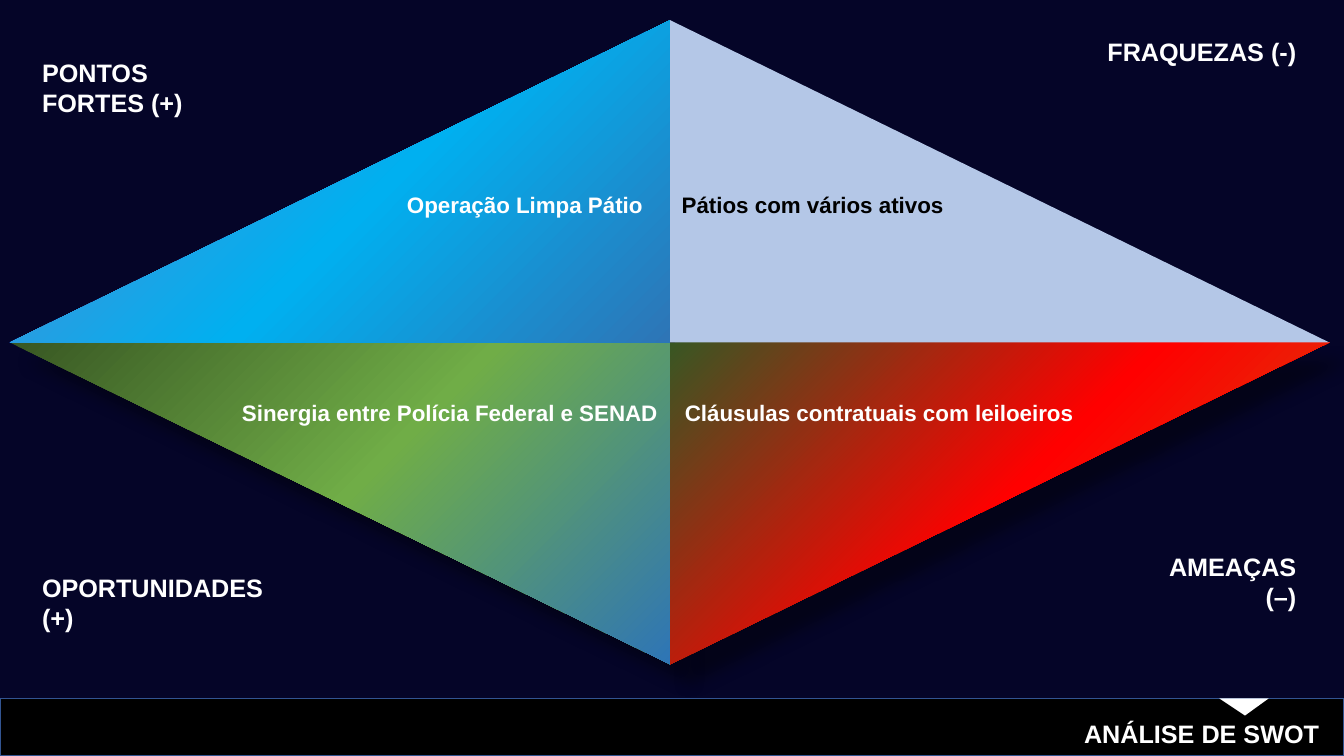
from copy import deepcopy

from pptx import Presentation
from pptx.dml.color import RGBColor
from pptx.enum.shapes import MSO_SHAPE
from pptx.enum.text import MSO_ANCHOR, PP_ALIGN
from pptx.oxml import parse_xml
from pptx.oxml.ns import nsdecls, qn
from pptx.util import Cm, Pt

RECT, WEDGE = MSO_SHAPE.RECTANGLE, MSO_SHAPE.ISOSCELES_TRIANGLE
LEFT, RIGHT = PP_ALIGN.LEFT, PP_ALIGN.RIGHT
MIDDLE = MSO_ANCHOR.MIDDLE

NAVY, BLACK, WHITE = "050528", "000000", "FFFFFF"
CENTER = (16.89, 8.63)
WEST, EAST, NORTH, SOUTH = 0.25, 33.5, 0.51, 16.74

# side x, tip y, (position, colour) stops, shadow
FACETS = [
    (WEST, SOUTH, [(0, "385723"), (0.5, "70AD47"), (1, "2E75B6")], True),
    (WEST, NORTH, [(0, "6183CB"), (0.55, "00B0F0"), (1, "2E75B6")], False),
    (EAST, SOUTH, [(0, "385723"), (0.5, "FF0000"), (1, "C55A11")], True),
    (EAST, NORTH, [(0, "B4C7E7")], False),
]
# box in cm, lines, alignment, size, colour
TEXTS = [
    ((0.81, 1.32, 4.98, 1.8), ["PONTOS FORTES (+)"], LEFT, 18, WHITE),
    ((0.81, 14.3, 6.35, 1.8), ["OPORTUNIDADES", "(+)"], LEFT, 18, WHITE),
    ((27.2, 0.79, 5.72, 1.02), ["FRAQUEZAS (-)"], RIGHT, 18, WHITE),
    ((26.57, 13.77, 6.35, 1.8), ["AMEAÇAS", "(–)"], RIGHT, 18, WHITE),
    ((3.98, 4.7, 12.47, 0.94), ["Operação Limpa Pátio"], RIGHT, 16, WHITE),
    ((5.28, 9.94, 11.55, 0.94), ["Sinergia entre Polícia Federal e SENAD"],
     RIGHT, 16, WHITE),
    ((17.01, 9.94, 11.55, 0.94), ["Cláusulas contratuais com leiloeiros"],
     LEFT, 16, WHITE),
    ((16.93, 4.7, 11.55, 0.94), ["Pátios com vários ativos"], LEFT, 16, BLACK),
]


def rgb(code):
    return RGBColor.from_string(code)


def place(box):
    return [Cm(n) for n in box]


def paint(shape, code):
    shape.fill.solid()
    shape.fill.fore_color.rgb = rgb(code)


def blend(shape, stops):
    """Fill with a diagonal gradient of three stops."""
    fill = shape.fill
    fill.gradient()
    fill.gradient_angle = 315
    first = shape.element.spPr.find(".//" + qn("a:gs"))
    first.addnext(deepcopy(first))
    for stop, (pos, code) in zip(fill.gradient_stops, stops):
        stop.position = pos
        stop.color.rgb = rgb(code)


def shade(shape):
    """Cast a soft shadow to the lower right."""
    shape.element.spPr.find(qn("a:effectLst")).append(parse_xml(
        f'<a:outerShdw {nsdecls("a")} blurRad="{Pt(12)}" dist="{Pt(19)}" '
        'dir="2700000" algn="tl" rotWithShape="0"><a:srgbClr val="000000">'
        '<a:alpha val="40000"/></a:srgbClr></a:outerShdw>'))


def add_facet(slide, side, tip, stops, shadow):
    x, y = CENTER
    pen = slide.shapes.build_freeform(Cm(x), Cm(tip))
    pen.add_line_segments([(Cm(side), Cm(y)), (Cm(x), Cm(y))], close=True)
    shape = pen.convert_to_shape()
    shape.shadow.inherit = False
    shape.line.fill.background()
    if len(stops) > 1:
        blend(shape, stops)
    else:
        paint(shape, stops[0][1])
    if shadow:
        shade(shape)


def add_block(slide, kind, box, code):
    shape = slide.shapes.add_shape(kind, *place(box))
    shape.shadow.inherit = False
    paint(shape, code)
    shape.line.fill.background()
    return shape


def write(frame, lines, align, size, code):
    frame.word_wrap = True
    frame.text = "\n".join(lines)
    look = {"name": "Arial", "size": Pt(size), "bold": True}
    for para in frame.paragraphs:
        para.alignment = align
        for key, value in look.items():
            setattr(para.font, key, value)
        para.font.color.rgb = rgb(code)


def add_text(slide, box, *style):
    write(slide.shapes.add_textbox(*place(box)).text_frame, *style)


def set_title(slide, box, text):
    title = slide.shapes.title
    for key, value in zip(("left", "top", "width", "height"), place(box)):
        setattr(title, key, value)
    write(title.text_frame, [text], RIGHT, 18, WHITE)
    title.text_frame.vertical_anchor = MIDDLE
    tree = slide.shapes.element
    tree.remove(title.element)
    tree.append(title.element)


def main():
    deck = Presentation()
    deck.slide_width, deck.slide_height = Cm(33.87), Cm(19.05)
    slide = deck.slides.add_slide(deck.slide_layouts[5])
    ground = slide.background.fill
    ground.solid()
    ground.fore_color.rgb = rgb(NAVY)

    bar = add_block(slide, RECT, (0, 17.6, 33.87, 1.45), BLACK)
    bar.line.color.rgb = rgb("325491")
    bar.line.width = Pt(1)
    notch = add_block(slide, WEDGE, (30.73, 17.6, 1.24, 0.43), WHITE)
    notch.rotation = 180
    notch.adjustments[0] = 0.48
    set_title(slide, (16.28, 17.98, 17.22, 1.02), "ANÁLISE DE SWOT")

    for facet in FACETS:
        add_facet(slide, *facet)
    for text in TEXTS:
        add_text(slide, *text)
    deck.save("out.pptx")


if __name__ == "__main__":
    main()
